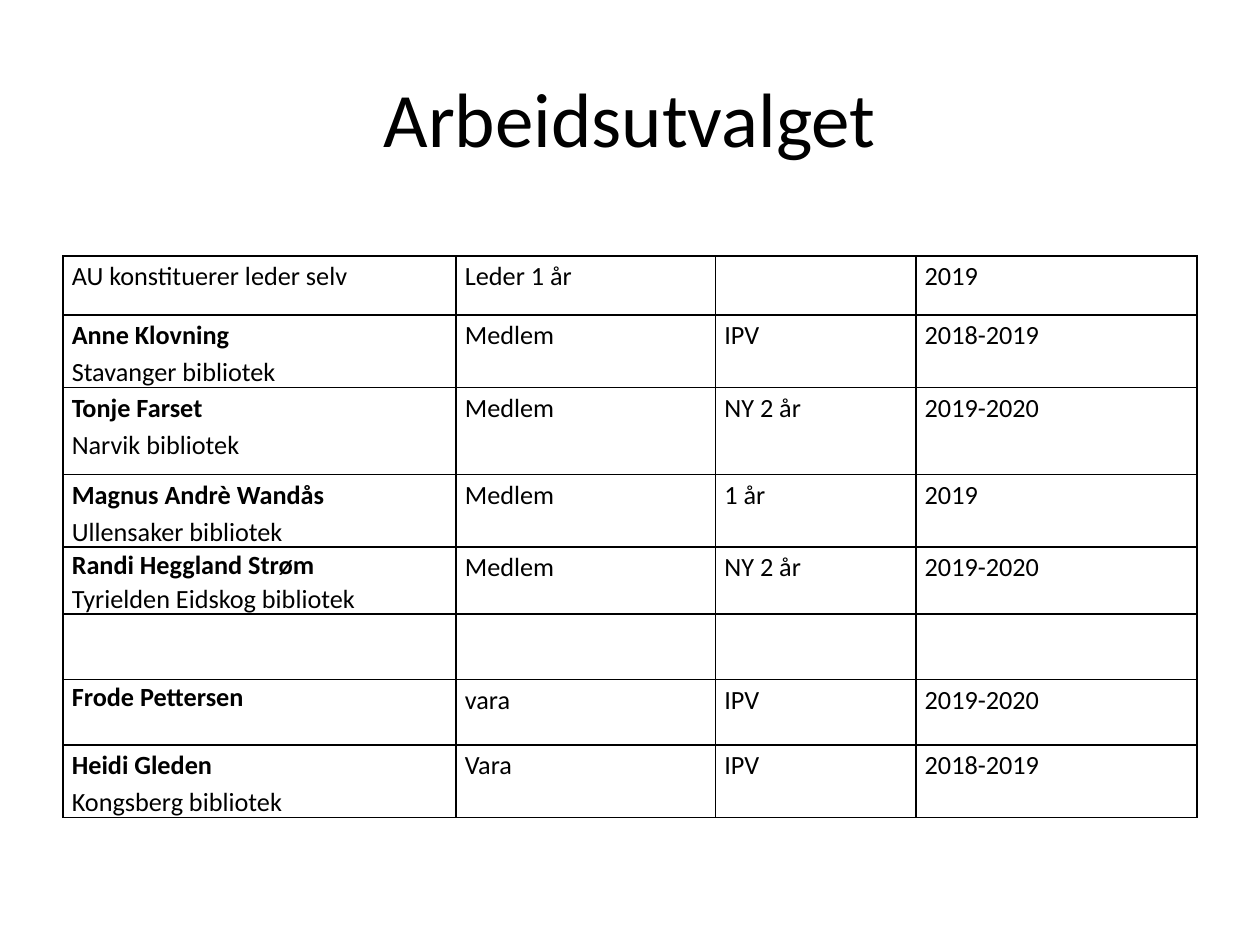
from lxml import etree
from pptx import Presentation
from pptx import util as u
from pptx.dml.color import RGBColor
from pptx.enum import text
from pptx.oxml import ns

COLORS = {"ink": "000000", "paper": "FFFFFF"}
COLUMN_WIDTHS = [3.12, 2.06, 1.59, 2.23]
ROW_HEIGHTS = [0.47, 0.56, 0.69, 0.56, 0.52, 0.52, 0.52, 0.56]
# name, library, role, election, period, line spacing of the first column
MEMBERS = [
    ("", "AU konstituerer leder selv", "Leder 1 år", "", "2019", 1.15),
    ("Anne Klovning", "Stavanger bibliotek", "Medlem", "IPV", "2018-2019", 1.15),
    ("Tonje Farset", "Narvik bibliotek", "Medlem", "NY 2 år", "2019-2020", 1.15),
    ("Magnus Andrè Wandås", "Ullensaker bibliotek", "Medlem", "1 år", "2019", 1.15),
    ("Randi Heggland Strøm", "Tyrielden Eidskog bibliotek", "Medlem", "NY 2 år",
     "2019-2020", 1.07),
    ("", "", "", "", "", 1.15),
    ("Frode Pettersen", "", "vara", "IPV", "2019-2020", 1.07),
    ("Heidi Gleden", "Kongsberg bibliotek", "Vara", "IPV", "2018-2019", 1.15),
]


class SlideBuilder:
    """Holds the style and the slide being filled."""

    def __init__(self, slide, font="Calibri"):
        self.slide = slide
        self.font = font

    def background(self, color):
        fill = self.slide.background.fill
        fill.solid()
        fill.fore_color.rgb = RGBColor.from_string(COLORS[color])

    def add_lines(self, paragraph, lines, size):
        """Put (words, bold) pairs as lines into one paragraph."""
        formats = {"name": self.font, "size": u.Pt(size)}
        for attribute, value in formats.items():
            setattr(paragraph.font, attribute, value)
        for index, (words, bold) in enumerate(lines):
            if index:
                paragraph.add_line_break()
            run = paragraph.add_run()
            run.text = words
            for attribute, value in {**formats, "bold": bold}.items():
                setattr(run.font, attribute, value)
            run.font.color.rgb = RGBColor.from_string(COLORS["ink"])

    def title(self, words, left, top, width, height):
        heading = self.slide.shapes.add_textbox(
            *map(u.Inches, (left, top, width, height))).text_frame
        heading.word_wrap = True
        heading.vertical_anchor = text.MSO_ANCHOR.MIDDLE
        heading.paragraphs[0].alignment = text.PP_ALIGN.CENTER
        self.add_lines(heading.paragraphs[0], [(words, False)], 44)

    def border(self, cell):
        properties = cell._tc.get_or_add_tcPr()
        for side in ("lnL", "lnR", "lnT", "lnB"):
            line = etree.SubElement(properties, ns.qn(f"a:{side}"), w=str(u.Pt(1)))
            fill = etree.SubElement(line, ns.qn("a:solidFill"))
            etree.SubElement(fill, ns.qn("a:srgbClr"), val=COLORS["ink"])

    def cell(self, cell, lines, spacing):
        margins = {"margin_left": 0.07, "margin_right": 0.07,
                   "margin_top": 0, "margin_bottom": 0}
        for attribute, value in margins.items():
            setattr(cell, attribute, u.Inches(value))
        self.border(cell)
        cell.fill.background()
        paragraph = cell.text_frame.paragraphs[0]
        paragraph.line_spacing = spacing
        self.add_lines(paragraph, lines, 15)

    def member_table(self, members, left, top):
        table = self.slide.shapes.add_table(
            len(members), len(COLUMN_WIDTHS), u.Inches(left), u.Inches(top),
            u.Inches(sum(COLUMN_WIDTHS)), u.Inches(sum(ROW_HEIGHTS))).table
        table.first_row = table.horz_banding = False
        for column, width in zip(table.columns, COLUMN_WIDTHS):
            column.width = u.Inches(width)
        for row, height, member in zip(table.rows, ROW_HEIGHTS, members):
            row.height = u.Inches(height)
            name, library, *details, name_spacing = member
            entries = [[(name, True), (library, False)]]
            entries += [[(detail, False)] for detail in details]
            for index, (cell, entry) in enumerate(zip(row.cells, entries)):
                lines = [line for line in entry if line[0]]
                self.cell(cell, lines, 1.15 if index else name_spacing)


def main():
    presentation = Presentation()
    presentation.slide_width = u.Inches(10)
    presentation.slide_height = u.Inches(7.5)
    builder = SlideBuilder(presentation.slides.add_slide(presentation.slide_layouts[6]))
    builder.background("paper")
    builder.title("Arbeidsutvalget", 0.5, 0.3, 9, 1.25)
    builder.member_table(MEMBERS, 0.5, 2.03)
    presentation.save("out.pptx")


if __name__ == "__main__":
    main()
